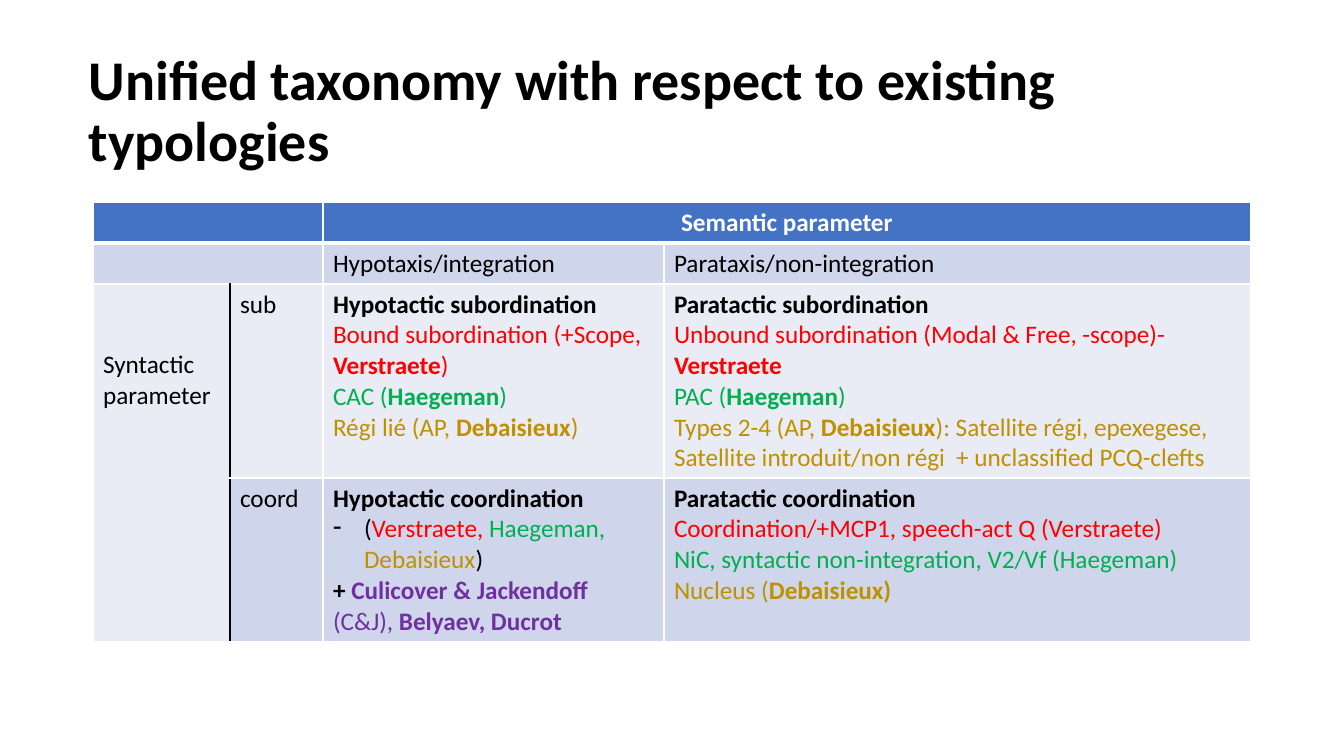
from dataclasses import dataclass

from lxml import etree
from pptx import Presentation
from pptx.dml.color import RGBColor
from pptx.enum.text import MSO_ANCHOR, PP_ALIGN
from pptx.oxml.ns import qn
from pptx.util import Emu, Pt

CENTER = PP_ALIGN.CENTER
MIDDLE = MSO_ANCHOR.MIDDLE
EMU_PER_PX = 914400 / 100.8


@dataclass(frozen=True)
class Theme:
    font: str = "Calibri"
    title_size: int = 40
    body_size: int = 18
    black: str = "000000"
    white: str = "FFFFFF"
    red: str = "FF0000"
    green: str = "00B050"
    gold: str = "BF9000"
    purple: str = "7030A0"
    header: str = "4472C4"
    band_dark: str = "CFD5EA"
    band_light: str = "E9EBF5"


THEME = Theme()
BLACK, WHITE, RED = THEME.black, THEME.white, THEME.red
GREEN, GOLD, PURPLE = THEME.green, THEME.gold, THEME.purple

COLUMN_WIDTHS = (137, 93, 341, 587)
ROW_HEIGHTS = (41, 41, 194, 164)
ROW_FILLS = (THEME.header, THEME.band_dark, THEME.band_light, THEME.band_dark)
MERGES = (((0, 0), (0, 1)), ((0, 2), (0, 3)), ((1, 0), (1, 1)), ((2, 0), (3, 0)))

# Each cell is a list of paragraphs; each paragraph is a list of (text, colour, bold).
CELLS = {
    (0, 2): [[("Semantic parameter", WHITE, True)]],
    (1, 2): [[("Hypotaxis/integration", BLACK, False)]],
    (1, 3): [[("Parataxis/non-integration", BLACK, False)]],
    (2, 0): [[("Syntactic", BLACK, False)], [("parameter", BLACK, False)]],
    (2, 1): [[("sub", BLACK, False)]],
    (2, 2): [
        [("Hypotactic subordination", BLACK, True)],
        [("Bound subordination (+Scope, ", RED, False), ("Verstraete", RED, True),
         (")", RED, False)],
        [("CAC (", GREEN, False), ("Haegeman", GREEN, True), (")", GREEN, False)],
        [("Régi lié (AP, ", GOLD, False), ("Debaisieux", GOLD, True), (")", GOLD, False)],
    ],
    (2, 3): [
        [("Paratactic subordination", BLACK, True)],
        [("Unbound subordination (Modal & Free, -scope)-", RED, False),
         ("Verstraete", RED, True)],
        [("PAC (", GREEN, False), ("Haegeman", GREEN, True), (")", GREEN, False)],
        [("Types 2-4 (AP, ", GOLD, False), ("Debaisieux", GOLD, True),
         ("): Satellite régi, epexegese, Satellite introduit/non régi  "
          "+ unclassified PCQ-clefts", GOLD, False)],
    ],
    (3, 1): [[("coord", BLACK, False)]],
    (3, 2): [
        [("Hypotactic coordination", BLACK, True)],
        [("(", BLACK, False), ("Verstraete, ", RED, False), ("Haegeman, ", GREEN, False),
         ("Debaisieux", GOLD, False), (")", BLACK, False)],
        [("+ ", BLACK, True), ("Culicover & Jackendoff ", PURPLE, True),
         ("(C&J), ", PURPLE, False), ("Belyaev, Ducrot", PURPLE, True)],
    ],
    (3, 3): [
        [("Paratactic coordination", BLACK, True)],
        [("Coordination/+MCP1, speech-act Q (Verstraete)", RED, False)],
        [("NiC, syntactic non-integration, V2/Vf (Haegeman)", GREEN, False)],
        [("Nucleus (", GOLD, False), ("Debaisieux)", GOLD, True)],
    ],
}


def px(length):
    return Emu(round(length * EMU_PER_PX))


def add_runs(p, runs, size):
    for text, color, bold in runs:
        r = p.add_run()
        r.text = text
        r.font.name = THEME.font
        r.font.size = Pt(size)
        r.font.bold = bold
        r.font.color.rgb = RGBColor.from_string(color)


def add_title(s, text):
    tf = s.shapes.add_textbox(px(79), px(40), px(1199), px(146)).text_frame
    tf.word_wrap = True
    tf.vertical_anchor = MIDDLE
    p = tf.paragraphs[0]
    p.line_spacing = 0.9
    add_runs(p, [(text, BLACK, True)], THEME.title_size)


def set_dash_bullet(p, indent):
    pPr = p._p.get_or_add_pPr()
    pPr.set("marL", str(px(indent)))
    pPr.set("indent", str(-px(indent)))
    etree.SubElement(pPr, qn("a:buChar")).set("char", "-")


def set_border(cell, side, color, width):
    ln = etree.SubElement(cell._tc.get_or_add_tcPr(), qn(f"a:ln{side}"), w=str(Pt(width)))
    fill = etree.SubElement(ln, qn("a:solidFill"))
    etree.SubElement(fill, qn("a:srgbClr"), val=color)


def style_cell(cell, row, col):
    """Draw white rules, thick under the header, and a black one beside the row labels."""
    in_body = row >= 2
    left = BLACK if in_body and col == 1 else WHITE
    right = BLACK if in_body and col == 0 else WHITE
    set_border(cell, "L", left, 1)
    set_border(cell, "R", right, 1)
    set_border(cell, "T", WHITE, 3 if row == 1 else 1)
    set_border(cell, "B", WHITE, 3 if row == 0 else 1)
    cell.fill.solid()
    color = THEME.band_light if in_body and col == 0 else ROW_FILLS[row]
    cell.fill.fore_color.rgb = RGBColor.from_string(color)


def fill_cell(cell, paragraphs):
    tf = cell.text_frame
    for i, runs in enumerate(paragraphs):
        p = tf.add_paragraph() if i else tf.paragraphs[0]
        add_runs(p, runs, THEME.body_size)


def add_taxonomy_table(s):
    rows, cols = len(ROW_HEIGHTS), len(COLUMN_WIDTHS)
    table = s.shapes.add_table(rows, cols, px(93), px(202), px(sum(COLUMN_WIDTHS)),
                               px(sum(ROW_HEIGHTS))).table
    table.first_row = table.horz_banding = False
    for column, width in zip(table.columns, COLUMN_WIDTHS):
        column.width = px(width)
    for row, height in zip(table.rows, ROW_HEIGHTS):
        row.height = px(height)
    for row in range(rows):
        for col in range(cols):
            style_cell(table.cell(row, col), row, col)
    for start, end in MERGES:
        table.cell(*start).merge(table.cell(*end))
    for place, paragraphs in CELLS.items():
        fill_cell(table.cell(*place), paragraphs)
    table.cell(0, 2).text_frame.paragraphs[0].alignment = CENTER
    table.cell(2, 0).margin_top = px(66)
    set_dash_bullet(table.cell(3, 2).text_frame.paragraphs[1], 31)


def main():
    prs = Presentation()
    prs.slide_width, prs.slide_height = px(1344), px(756)
    s = prs.slides.add_slide(prs.slide_layouts[6])
    add_title(s, "Unified taxonomy with respect to existing typologies")
    add_taxonomy_table(s)
    prs.save("out.pptx")


if __name__ == "__main__":
    main()
